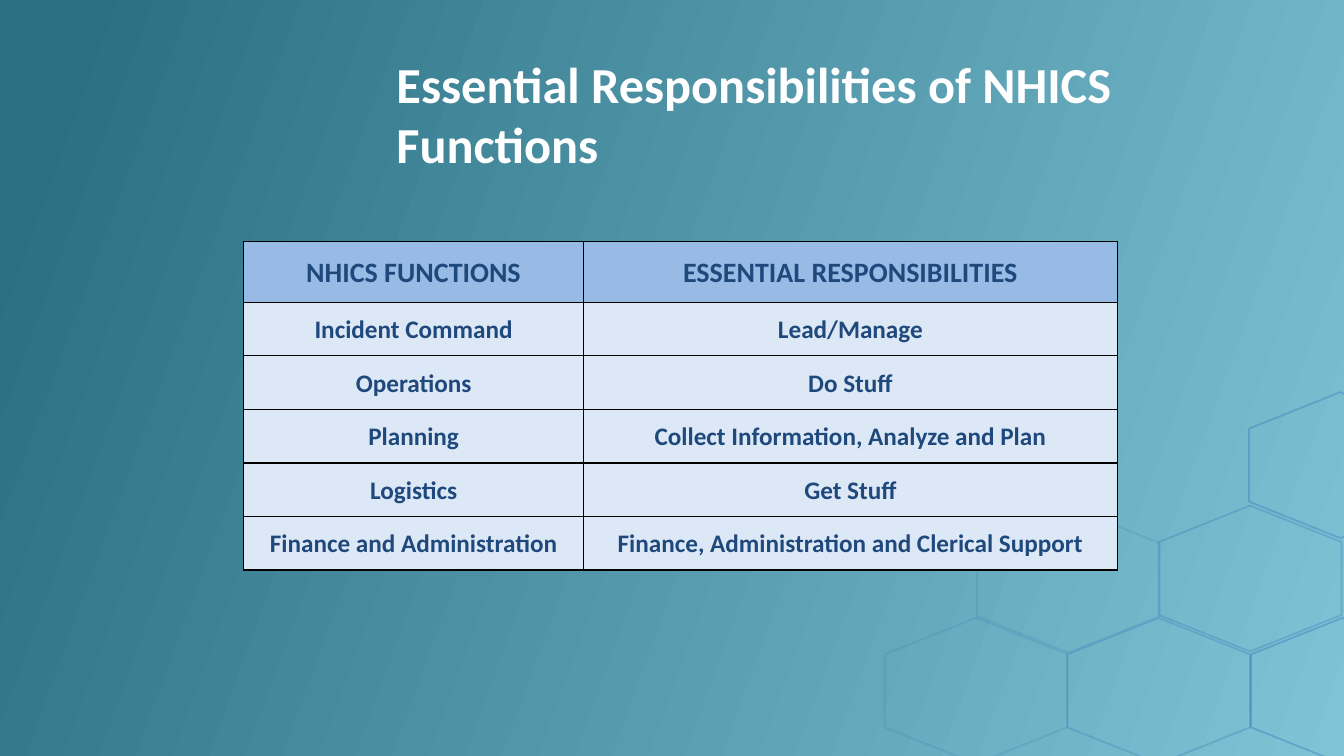
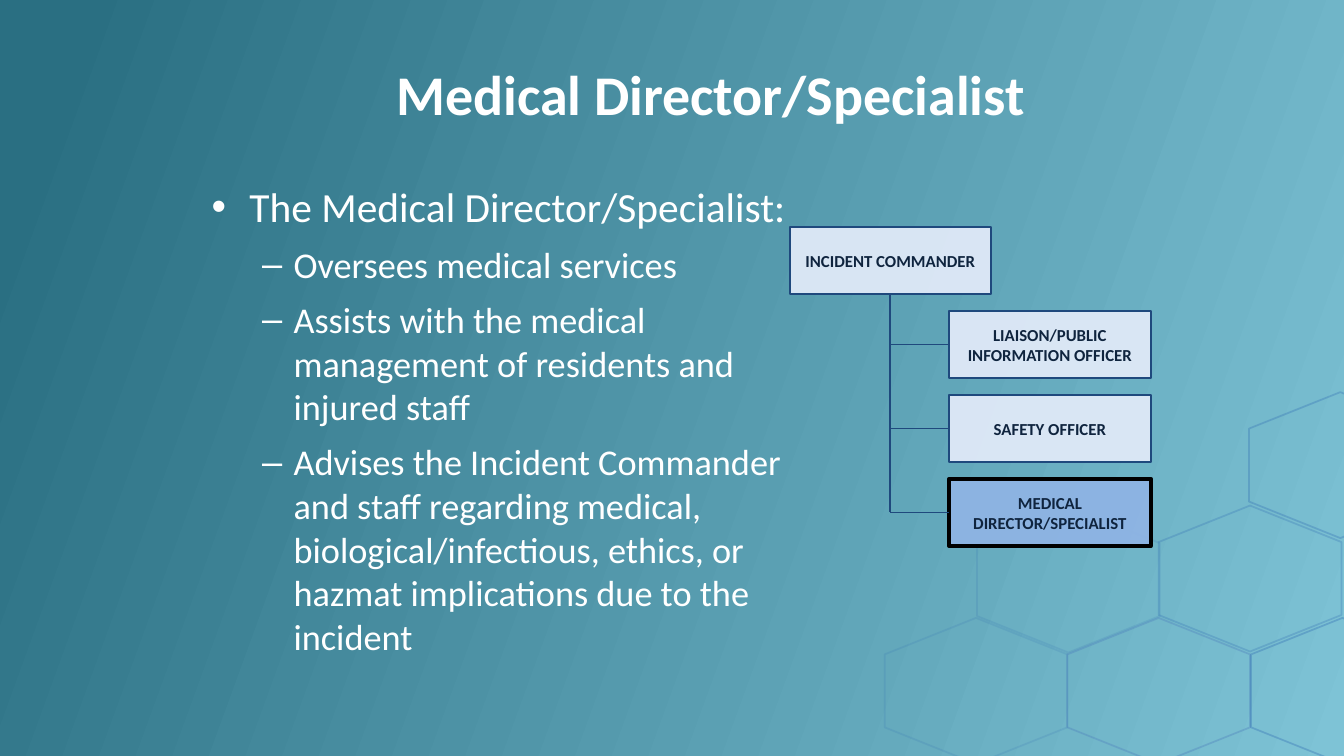
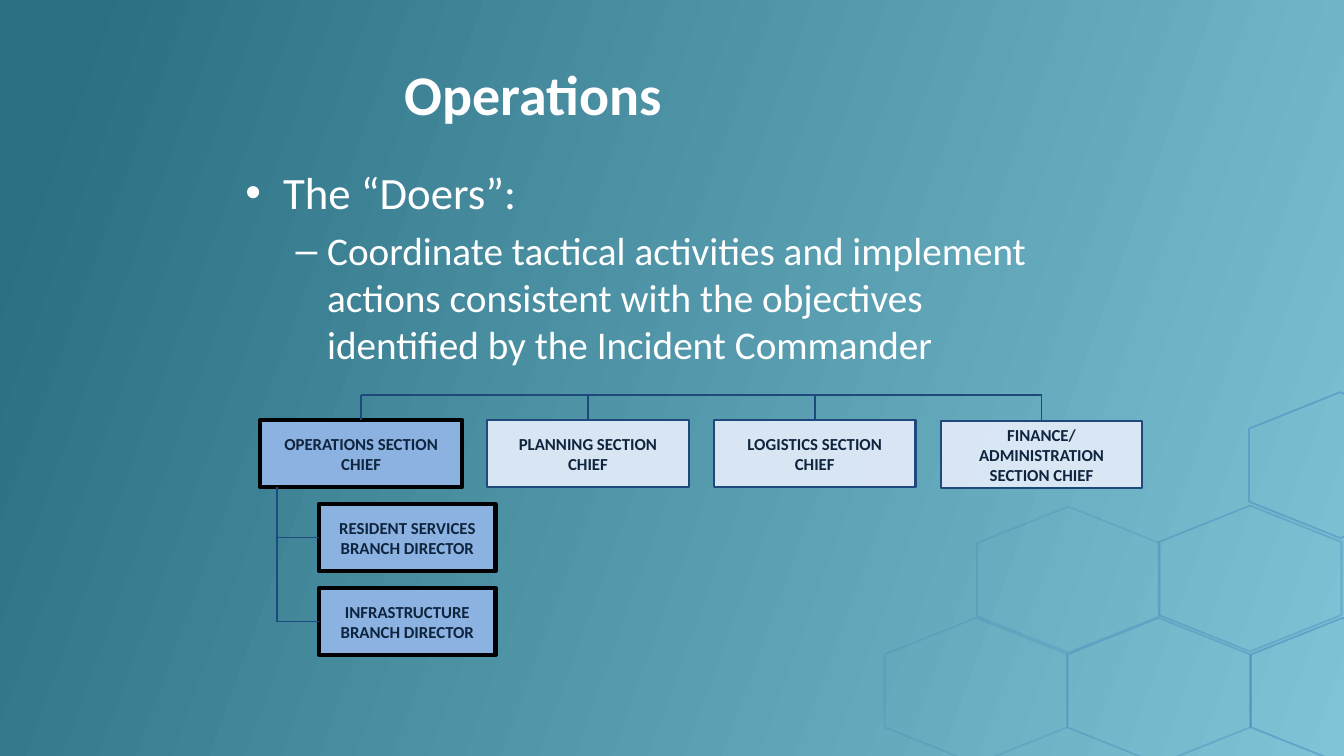
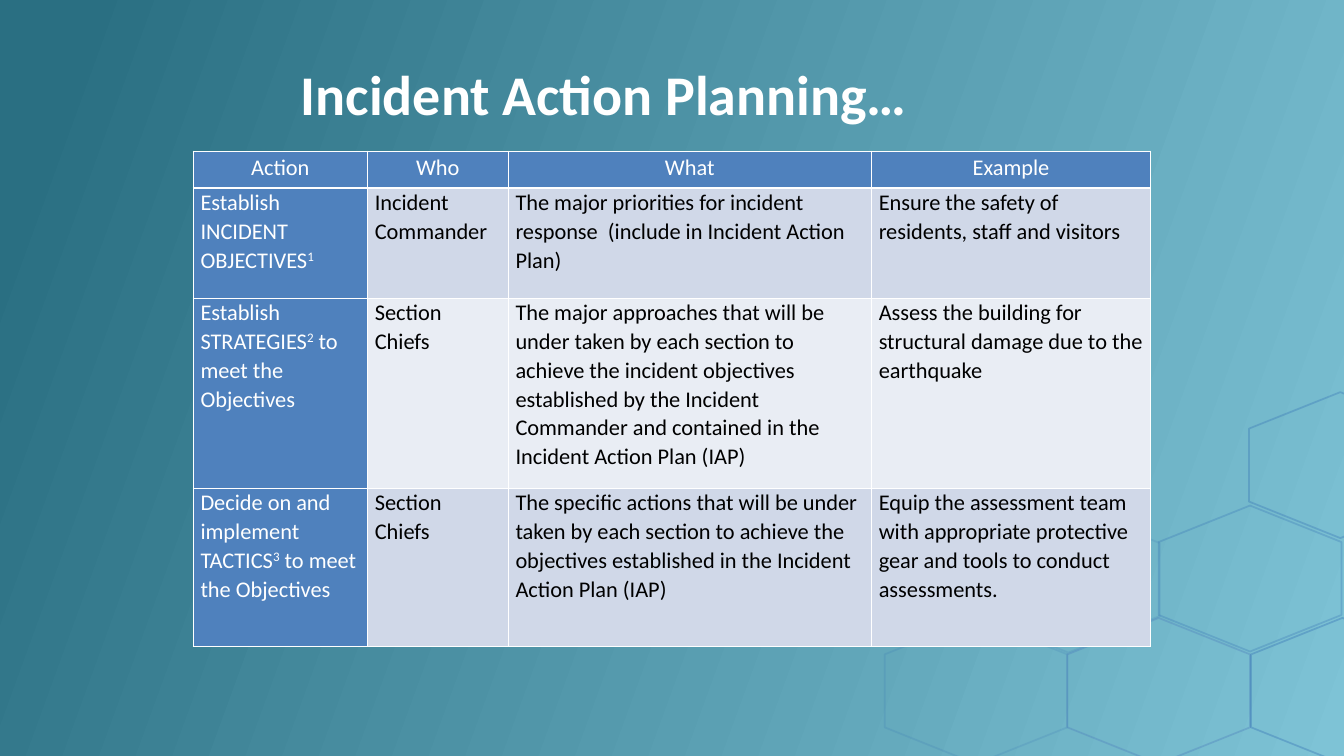
from lxml.etree import SubElement
from pptx import Presentation
from pptx.dml.color import RGBColor
from pptx.enum.shapes import MSO_CONNECTOR as CONNECTOR, MSO_SHAPE as SHAPE
from pptx.enum.text import MSO_ANCHOR as ANCHOR, MSO_AUTO_SIZE as AUTO_SIZE, PP_ALIGN as ALIGN
from pptx.oxml.ns import qn
from pptx.util import Pt

PX = 9525
FONT = "Calibri"
WHITE = RGBColor(0xFF, 0xFF, 0xFF)
BLACK = RGBColor(0x00, 0x00, 0x00)
DEEP_TEAL = RGBColor(0x2A, 0x6F, 0x82)
LIGHT_TEAL = RGBColor(0x7E, 0xC3, 0xD6)
HEX_BLUE = RGBColor(0x2D, 0x68, 0xB1)
NAVY = RGBColor(0x1F, 0x49, 0x7D)
INK = RGBColor(0x0F, 0x24, 0x3E)
PALE = RGBColor(0xDD, 0xE8, 0xF6)
HIGHLIGHT = RGBColor(0x8E, 0xB4, 0xE3)
SKY = RGBColor(0x98, 0xBB, 0xE5)
ACCENT = RGBColor(0x4F, 0x81, 0xBD)
BAND_DARK = RGBColor(0xD0, 0xD8, 0xE8)
BAND_LIGHT = RGBColor(0xE9, 0xED, 0xF4)


def add_run(paragraph, text, size, color, bold=False):
    run = paragraph.add_run()
    run.text = text
    run.font.name = FONT
    run.font.size = Pt(size)
    run.font.bold = bold
    run.font.color.rgb = color
    return run


def set_opacity(shape, fill_place, percent):
    color = shape.element.xpath(f"p:spPr/{fill_place}/a:srgbClr")[0]
    SubElement(color, qn("a:alpha")).set("val", str(percent * 1000))


prs = Presentation()
prs.slide_width, prs.slide_height = 1280 * PX, 720 * PX

master = prs.slide_master
backdrop = master.background.fill
backdrop.gradient()
backdrop.gradient_angle = 340
for stop, position, color in zip(backdrop.gradient_stops, (0.05, 1), (DEEP_TEAL, LIGHT_TEAL)):
    stop.position = position
    stop.color.rgb = color

BODY_LAYOUT, TITLE_LAYOUT = prs.slide_layouts[1], prs.slide_layouts[5]
slides = []
for layout, title, left, top, width, size in [
    (TITLE_LAYOUT, "Essential Responsibilities of NHICS Functions", 368, 48, 704, 36),
    (BODY_LAYOUT, "Medical Director/Specialist", 368, 29, 704, 40),
    (BODY_LAYOUT, "Operations", 376, 29, 696, 40),
    (TITLE_LAYOUT, "Incident Action Planning…", 277, 29, 939, 40),
]:
    slide = prs.slides.add_slide(layout)
    heading = slide.shapes.title
    heading.left, heading.top, heading.width, heading.height = left * PX, top * PX, width * PX, 120 * PX
    heading.text_frame.auto_size = AUTO_SIZE.NONE
    heading.text_frame.vertical_anchor = ANCHOR.MIDDLE
    heading.text_frame.paragraphs[0].alignment = ALIGN.LEFT
    add_run(heading.text_frame.paragraphs[0], title, size, WHITE, True)
    slides.append(slide)
functions_slide, director_slide, operations_slide, planning_slide = slides

for order, (left, top, color, opacity) in enumerate([
    (948, 465, HEX_BLUE, 15),
    (1207, 356, HEX_BLUE, 30),
    (1034, 571, ACCENT, 37),
    (860, 571, HEX_BLUE, 15),
    (1209, 571, HEX_BLUE, 32),
    (1121, 464, HEX_BLUE, 25),
]):
    hexagon = functions_slide.shapes.add_shape(SHAPE.HEXAGON, left * PX, top * PX, 139 * PX, 174 * PX)
    hexagon.rotation = 90
    hexagon.shadow.inherit = False
    hexagon.fill.background()
    hexagon.line.color.rgb = color
    hexagon.line.width = Pt(1.25)
    set_opacity(hexagon, "a:ln/a:solidFill", opacity)
    hexagon.element.xpath("p:nvSpPr/p:cNvPr")[0].set("id", str(101 + order))
    master.shapes.element.insert(2 + order, hexagon.element)

for slide, left, top, width, height, sizes, space_after, points in [
    (director_slide, 192, 168, 576, 459, (29.6, 25.9), 3, [
        (0, "The Medical Director/Specialist:"),
        (1, "Oversees medical services"),
        (1, "Assists with the medical management of residents and injured staff"),
        (1, "Advises the Incident Commander and staff regarding medical, biological/infectious, "
            "ethics, or hazmat implications due to the incident"),
    ]),
    (operations_slide, 224, 152, 792, 296, (32, 28), 0, [
        (0, "The “Doers”:"),
        (1, "Coordinate tactical activities and implement actions consistent with the objectives "
            "identified by the Incident Commander"),
    ]),
]:
    duties = slide.placeholders[1]
    duties.left, duties.top, duties.width, duties.height = left * PX, top * PX, width * PX, height * PX
    duties.text_frame.auto_size = AUTO_SIZE.NONE
    for index, (level, point) in enumerate(points):
        paragraph = duties.text_frame.add_paragraph() if index else duties.text_frame.paragraphs[0]
        paragraph.level = level
        paragraph.space_after = Pt(space_after)
        if index == 0:
            paragraph.space_before = Pt(0)
        add_run(paragraph, point, sizes[level], WHITE)

positions = {}
for slide, label, left, top, width, highlighted in [
    (director_slide, "INCIDENT COMMANDER", 752, 216, 192, False),
    (director_slide, "LIAISON/PUBLIC INFORMATION OFFICER", 904, 296, 192, False),
    (director_slide, "SAFETY OFFICER", 904, 376, 192, False),
    (director_slide, "MEDICAL DIRECTOR/SPECIALIST", 904, 456, 192, True),
    (operations_slide, "OPERATIONS SECTION CHIEF", 248, 400, 192, True),
    (operations_slide, "PLANNING SECTION CHIEF", 464, 400, 192, False),
    (operations_slide, "LOGISTICS SECTION\nCHIEF", 680, 400, 192, False),
    (operations_slide, "FINANCE/\nADMINISTRATION SECTION CHIEF", 896, 401, 192, False),
    (operations_slide, "RESIDENT SERVICES BRANCH DIRECTOR", 304, 480, 168, True),
    (operations_slide, "INFRASTRUCTURE BRANCH DIRECTOR", 304, 560, 168, True),
]:
    position = slide.shapes.add_shape(SHAPE.RECTANGLE, left * PX, top * PX, width * PX, 64 * PX)
    position.shadow.inherit = False
    position.fill.solid()
    position.fill.fore_color.rgb = HIGHLIGHT if highlighted else PALE
    set_opacity(position, "a:solidFill", 97)
    position.line.color.rgb = BLACK if highlighted else NAVY
    position.line.width = Pt(3 if highlighted else 1.5)
    position.text_frame.word_wrap = True
    position.text_frame.vertical_anchor = ANCHOR.MIDDLE
    for index, line in enumerate(label.split("\n")):
        paragraph = position.text_frame.add_paragraph() if index else position.text_frame.paragraphs[0]
        paragraph.alignment = ALIGN.CENTER
        add_run(paragraph, line, 12, INK, True)
    positions[label] = position

for slide, start, end, label, side in [
    (director_slide, (848, 280), (848, 488), "INCIDENT COMMANDER", 2),
    (director_slide, (904, 328), (848, 328), "LIAISON/PUBLIC INFORMATION OFFICER", 1),
    (director_slide, (904, 408), (848, 408), "SAFETY OFFICER", 1),
    (director_slide, (904, 488), (848, 488), "MEDICAL DIRECTOR/SPECIALIST", 1),
    (operations_slide, (344, 376), (992, 376), None, None),
    (operations_slide, (344, 400), (344, 376), "OPERATIONS SECTION CHIEF", 0),
    (operations_slide, (560, 400), (560, 376), "PLANNING SECTION CHIEF", 0),
    (operations_slide, (776, 400), (776, 376), "LOGISTICS SECTION\nCHIEF", 0),
    (operations_slide, (992, 401), (992, 376), "FINANCE/\nADMINISTRATION SECTION CHIEF", 0),
    (operations_slide, (264, 464), (264, 592), None, None),
    (operations_slide, (304, 512), (264, 512), "RESIDENT SERVICES BRANCH DIRECTOR", 1),
    (operations_slide, (304, 592), (264, 592), "INFRASTRUCTURE BRANCH DIRECTOR", 1),
]:
    link = slide.shapes.add_connector(CONNECTOR.STRAIGHT, *(value * PX for value in start + end))
    if label:
        link.begin_connect(positions[label], side)
    link.line.color.rgb = NAVY
    link.line.width = Pt(1.25)
    SubElement(link.element.spPr, qn("a:effectLst"))

responsibilities = {
    "slide": functions_slide, "left": 232, "top": 230,
    "widths": (324, 508), "heights": (58, 51, 51, 51, 51, 51),
    "sizes": (20, 18), "bold": True, "anchor": ANCHOR.MIDDLE, "align": ALIGN.CENTER,
    "head_spacing": 1.05, "space_after": 4, "border": BLACK,
    "head": (SKY, NAVY), "label": (PALE, NAVY), "bands": (PALE, PALE), "text": NAVY,
    "rows": [
        ("NHICS FUNCTIONS", "ESSENTIAL RESPONSIBILITIES"),
        ("Incident Command", "Lead/Manage"),
        ("Operations", "Do Stuff"),
        ("Planning", "Collect Information, Analyze and Plan"),
        ("Logistics", "Get Stuff"),
        ("Finance and Administration", "Finance, Administration and Clerical Support"),
    ],
}
action_plan = {
    "slide": planning_slide, "left": 184, "top": 144,
    "widths": (166, 134, 346, 266), "heights": (35, 105, 181, 151),
    "sizes": (16, 16), "bold": False, "anchor": ANCHOR.TOP, "align": ALIGN.LEFT,
    "head_spacing": 1.1, "space_after": 3, "border": WHITE,
    "head": (ACCENT, WHITE), "label": (ACCENT, WHITE), "bands": (BAND_LIGHT, BAND_DARK), "text": BLACK,
    "rows": [
        ("Action", "Who", "What", "Example"),
        ("Establish INCIDENT OBJECTIVES^1", "Incident Commander",
         "The major priorities for incident response  (include in Incident Action Plan)",
         "Ensure the safety of residents, staff and visitors"),
        ("Establish STRATEGIES^2^ to meet the Objectives", "Section Chiefs",
         "The major approaches that will be under taken by each section to achieve the incident "
         "objectives established by the Incident Commander and contained in the Incident Action Plan (IAP)",
         "Assess the building for structural damage due to the earthquake"),
        ("Decide on and implement TACTICS^3^ to meet the Objectives", "Section Chiefs",
         "The specific actions that will be under taken by each section to achieve the objectives "
         "established in the Incident Action Plan (IAP)",
         "Equip the assessment team with appropriate protective gear and tools to conduct assessments."),
    ],
}

for plan in (responsibilities, action_plan):
    widths, heights = plan["widths"], plan["heights"]
    grid = plan["slide"].shapes.add_table(
        len(heights), len(widths), plan["left"] * PX, plan["top"] * PX, sum(widths) * PX, sum(heights) * PX
    ).table
    for column, width in zip(grid.columns, widths):
        column.width = width * PX
    for row, height in zip(grid.rows, heights):
        row.height = height * PX
    for row_index, texts in enumerate(plan["rows"]):
        for column_index, text in enumerate(texts):
            if row_index == 0:
                fill, color = plan["head"]
            elif column_index == 0:
                fill, color = plan["label"]
            else:
                fill, color = plan["bands"][row_index % 2], plan["text"]
            cell = grid.cell(row_index, column_index)
            cell.margin_left = cell.margin_right = 7 * PX
            cell.margin_top = cell.margin_bottom = 0
            cell.vertical_anchor = plan["anchor"]
            for edge in ("a:lnL", "a:lnR", "a:lnT", "a:lnB"):
                border = SubElement(cell._tc.get_or_add_tcPr(), qn(edge), w=str(Pt(1)))
                SubElement(SubElement(border, qn("a:solidFill")), qn("a:srgbClr"), val=str(plan["border"]))
            cell.fill.solid()
            cell.fill.fore_color.rgb = fill
            paragraph = cell.text_frame.paragraphs[0]
            paragraph.alignment = plan["align"] if row_index else ALIGN.CENTER
            paragraph.line_spacing = 1.05 if row_index else plan["head_spacing"]
            paragraph.space_after = Pt(plan["space_after"])
            for part_index, part in enumerate(text.split("^")):
                run = add_run(paragraph, part, plan["sizes"][min(row_index, 1)], color, plan["bold"])
                if part_index % 2:
                    run._r.get_or_add_rPr().set("baseline", "30000")

prs.save("out.pptx")
